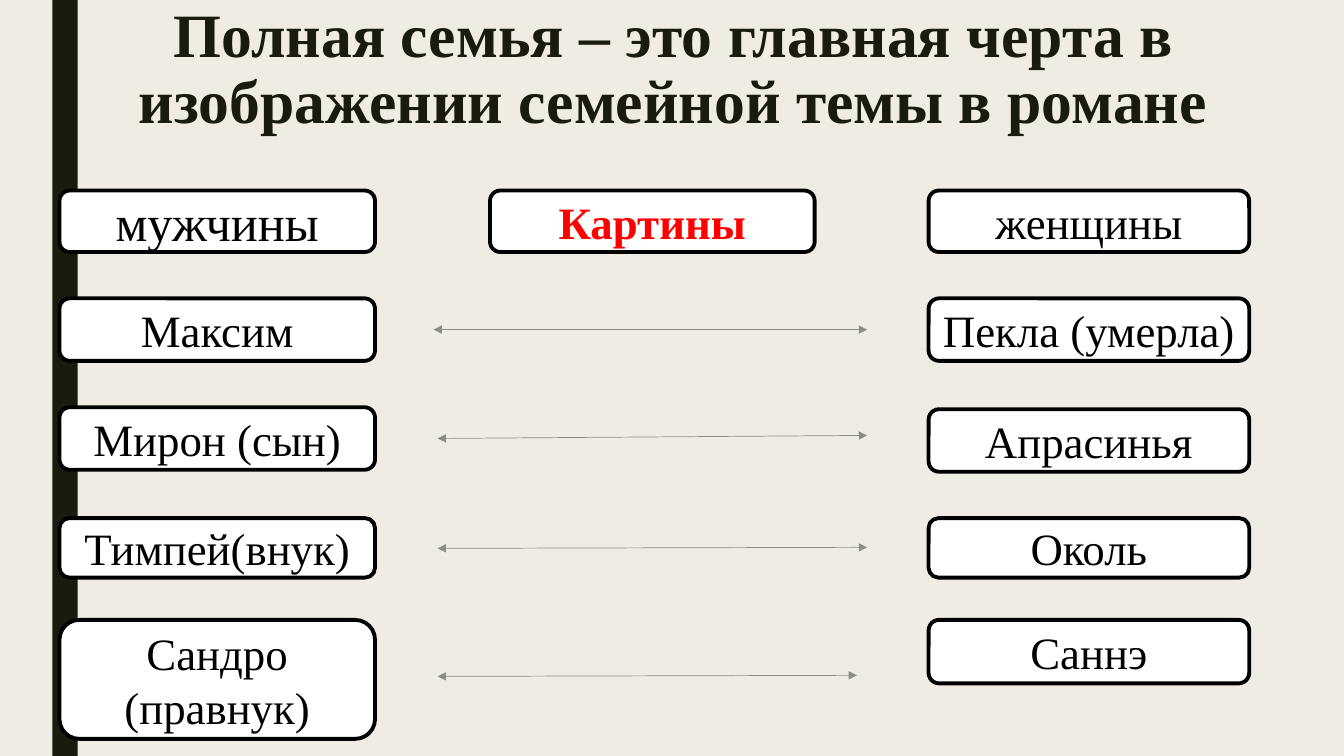
from lxml import etree
from pptx import Presentation
from pptx import util as u
from pptx.dml.color import RGBColor
from pptx.enum import shapes, text
from pptx.oxml.ns import qn

BACKGROUND = RGBColor(0xEF, 0xED, 0xE3)
DARK = RGBColor(0x19, 0x1B, 0x0E)
BLACK = RGBColor(0, 0, 0)
WHITE = RGBColor(0xFF, 0xFF, 0xFF)
RED = RGBColor(0xFF, 0, 0)
GREY = RGBColor(0x8C, 0x8D, 0x86)


class SlideBuilder:
    font = "Times New Roman"
    border = u.Pt(2.75)

    def __init__(self, prs):
        self.s = prs.slides.add_slide(prs.slide_layouts[5])
        fill = self.s.background.fill
        fill.solid()
        fill.fore_color.rgb = BACKGROUND

    def label(self, sp, words, anchor, size, color, bold=False, spacing=None):
        tf = sp.text_frame
        frame_format = {"word_wrap": True, "vertical_anchor": anchor,
                        "auto_size": text.MSO_AUTO_SIZE.NONE}
        for name, value in frame_format.items():
            setattr(tf, name, value)
        p = tf.paragraphs[0]
        p.alignment = text.PP_ALIGN.CENTER
        p.line_spacing = spacing
        r = p.add_run()
        r.text = words
        for name, value in {"name": self.font, "size": u.Pt(size), "bold": bold}.items():
            setattr(r.font, name, value)
        r.font.color.rgb = color

    def title(self, words, left, top, width, height):
        sp = self.s.shapes.title
        place = {"left": left, "top": top, "width": width, "height": height}
        for name, value in place.items():
            setattr(sp, name, u.Inches(value))
        self.label(sp, words, text.MSO_ANCHOR.TOP, 44, DARK, True, 0.89)

    def shape(self, kind, left, top, width, height, color):
        sp = self.s.shapes.add_shape(kind, *map(u.Inches, (left, top, width, height)))
        sp.shadow.inherit = False
        sp.fill.solid()
        sp.fill.fore_color.rgb = color
        sp.line.fill.background()
        return sp

    def band(self, left, top, width, height):
        sp = self.shape(shapes.MSO_SHAPE.RECTANGLE, left, top, width, height, DARK)
        # Move the band behind the title
        self.s.shapes.title.element.addprevious(sp.element)

    def box(self, words, left, top, width, height, size=32, color=BLACK, bold=False):
        sp = self.shape(shapes.MSO_SHAPE.ROUNDED_RECTANGLE, left, top, width, height, WHITE)
        sp.line.color.rgb = BLACK
        sp.line.width = self.border
        self.label(sp, words, text.MSO_ANCHOR.MIDDLE, size, color, bold)

    def arrow(self, x1, y1, x2, y2):
        connector = self.s.shapes.add_connector(
            shapes.MSO_CONNECTOR.STRAIGHT, *map(u.Inches, (x1, y1, x2, y2)))
        connector.line.color.rgb = GREY
        connector.line.width = u.Pt(0.5)
        properties = connector.element.spPr
        ln = properties.find(qn("a:ln"))
        for end in ("a:headEnd", "a:tailEnd"):
            etree.SubElement(ln, qn(end), type="triangle")
        etree.SubElement(properties, qn("a:effectLst"))


def main():
    prs = Presentation()
    prs.slide_width, prs.slide_height = u.Inches(13.33), u.Inches(7.5)
    slide = SlideBuilder(prs)

    # Side band and title
    slide.band(0.52, 0, 0.25, 7.5)
    slide.title("Полная семья – это главная черта в изображении семейной темы в романе",
                0.1, 0, 13.16, 1.59)

    # Column headings
    men, women = (0.59, 3.13), (9.21, 3.18)
    head_top, head_height = 1.89, 0.61
    slide.box("мужчины", men[0], head_top, men[1], head_height, size=36)
    slide.box("Картины", 4.86, head_top, 3.22, head_height, color=RED, bold=True)
    slide.box("женщины", women[0], head_top, women[1], head_height)

    # Couples: (name, top, height) for him and for her, then the arrow ends
    couples = [
        (("Максим", 2.96, 0.62), ("Пекла (умерла)", 2.96, 0.62), (4.3, 3.27, 8.6, 3.27)),
        (("Мирон (сын)", 4.04, 0.62), ("Апрасинья", 4.06, 0.62), (4.34, 4.35, 8.6, 4.32)),
        (("Тимпей(внук)", 5.14, 0.59), ("Околь", 5.14, 0.59), (4.34, 5.44, 8.6, 5.43)),
        (("Сандро (правнук)", 6.15, 1.18), ("Саннэ", 6.15, 0.63), (4.34, 6.71, 8.5, 6.7)),
    ]
    for him, her, ends in couples:
        for (left, width), (name, top, height) in ((men, him), (women, her)):
            slide.box(name, left, top, width, height)
        slide.arrow(*ends)

    prs.save("out.pptx")


if __name__ == "__main__":
    main()
